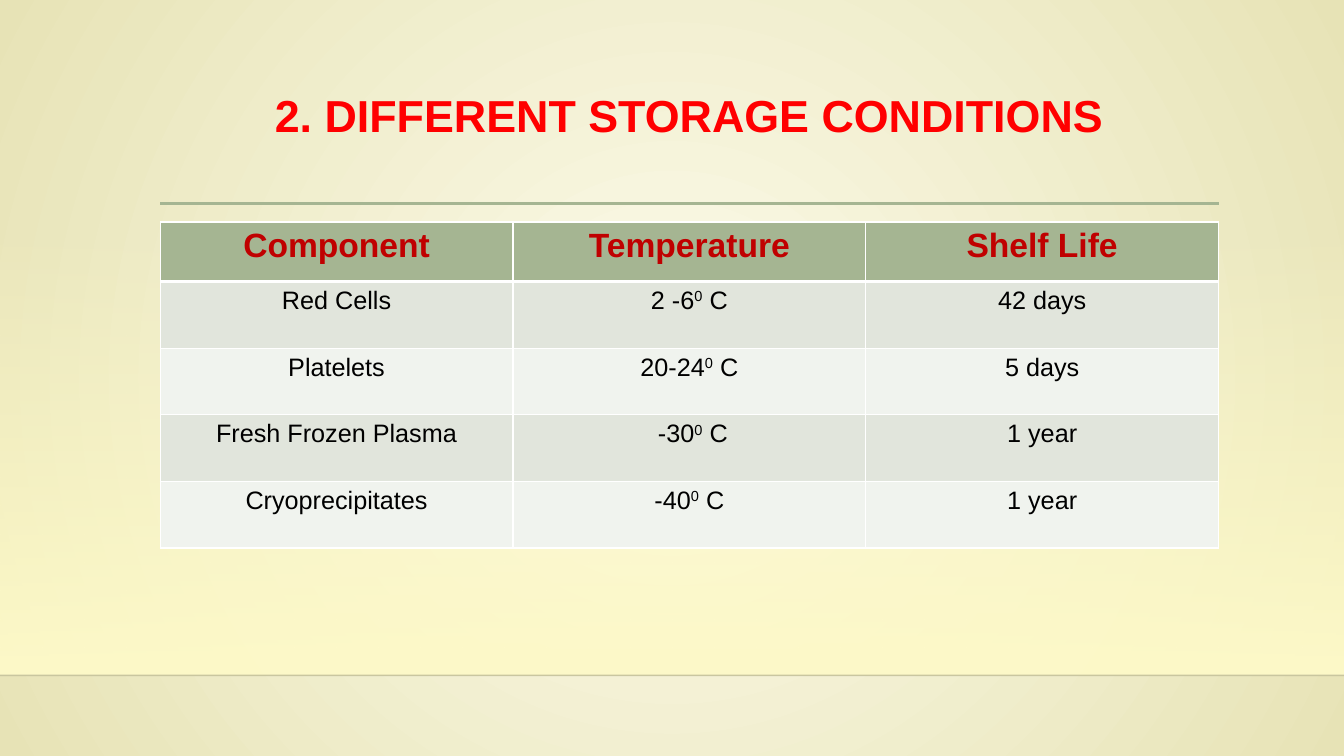
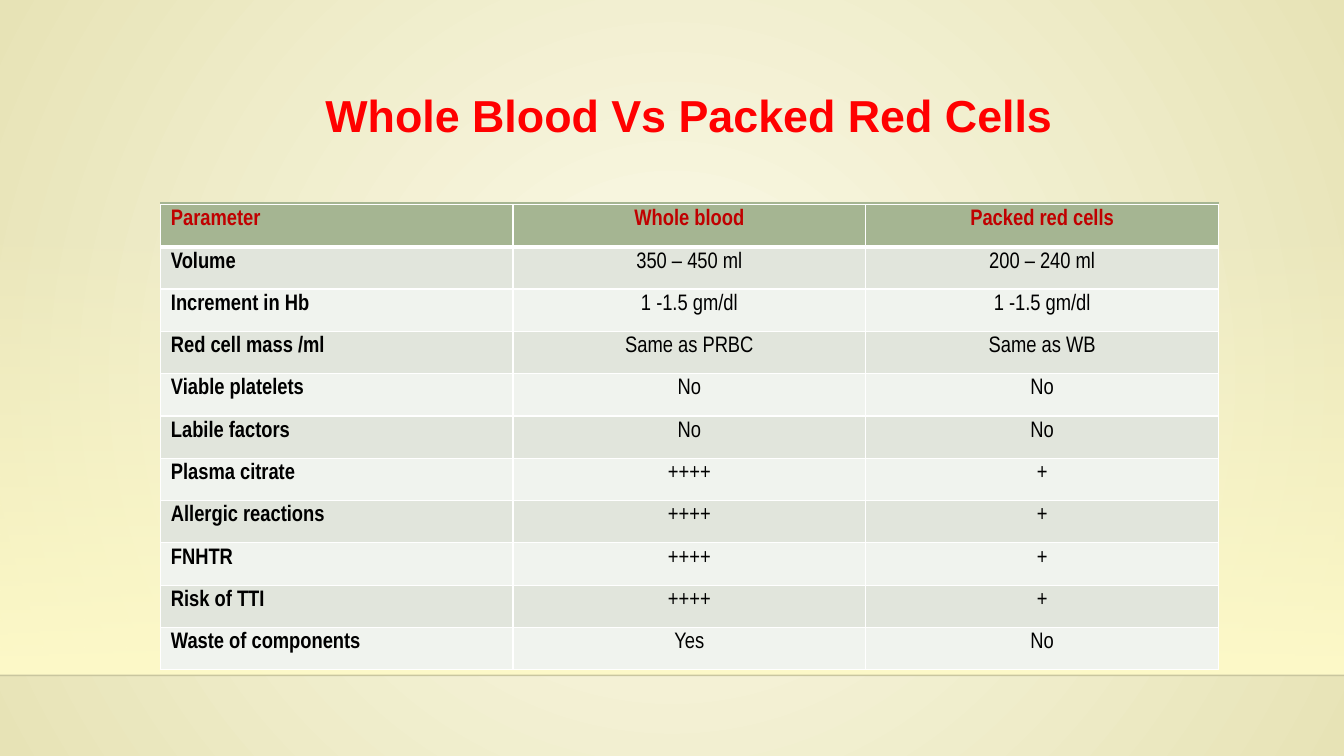
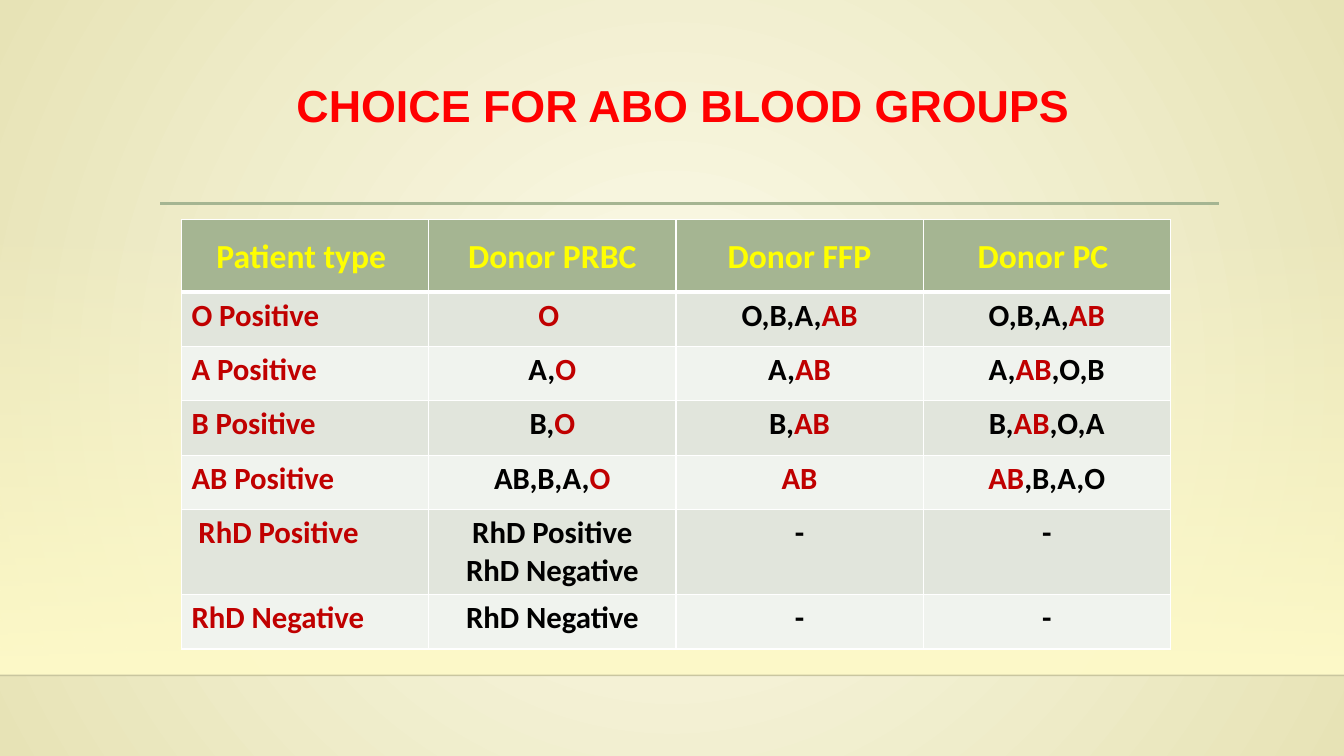
from dataclasses import dataclass

from lxml import etree
from pptx import Presentation
from pptx.dml.color import RGBColor
from pptx.enum.shapes import MSO_CONNECTOR as Connector, MSO_SHAPE as Preset
from pptx.enum.text import MSO_ANCHOR as Anchor, MSO_AUTO_SIZE as AutoSize, PP_ALIGN as Align
from pptx.oxml import parse_xml
from pptx.oxml.ns import nsdecls, qn
from pptx.util import Pt

# Shared measures and colours
SLIDE_WIDTH, SLIDE_HEIGHT = 960, 540
BAND_TOP, BAND_BOTTOM = 159, 482.4
CONTENT_LEFT, CONTENT_WIDTH = 114.4, 756
RULE_TOP = 145.4
TITLE_HEIGHT = 82.8
RED, DARK_RED, YELLOW = "FF0000", "C00000", "FFFF00"
BLACK, WHITE, GREEN = "000000", "FFFFFF", "A5B592"
BAND_FILLS = ("F0F3EE", "E1E5DC")
CREAM = "FEFAC9"


@dataclass(frozen=True)
class TableSlide:
    """A titled table; text between bars is accented, or raised without an accent colour."""
    title: str
    top: float
    row_heights: list[float]
    rows: list[list[str]]
    font: str
    header_size: float
    body_size: float
    left: float = CONTENT_LEFT
    width: float = CONTENT_WIDTH
    header_color: str = DARK_RED
    header_spacing: float = 1.0
    body_bold: bool = False
    label_bold: bool = False
    label_color: str = BLACK
    label_align: Align = Align.LEFT
    header_label_align: Align = Align.CENTER
    accent_color: str | None = None
    side_inset: float = 7.2
    title_top: float = 63.4
    title_inset: float = 3.6


def rgb(color: str) -> RGBColor:
    return RGBColor.from_string(color)


def paint_gradient(element, stops: list[tuple[str, int]], direction: str) -> None:
    """Replace the first solid fill; each stop is a colour and its opacity in percent."""
    last = len(stops) - 1
    stop_xml = "".join(
        f'<a:gs pos="{100000 * index // last}"><a:srgbClr val="{color}">'
        f'<a:alpha val="{opacity * 1000}"/></a:srgbClr></a:gs>'
        for index, (color, opacity) in enumerate(stops))
    solid = next(element.iter(qn("a:solidFill")))
    solid.getparent().replace(solid, parse_xml(
        f'<a:gradFill {nsdecls("a")} rotWithShape="1">'
        f"<a:gsLst>{stop_xml}</a:gsLst>{direction}</a:gradFill>"))


def add_rule(slide, left: float, top: float, right: float, color: str,
             width: float, opacity: int = 100):
    rule = slide.shapes.add_connector(
        Connector.STRAIGHT, Pt(left), Pt(top), Pt(right), Pt(top))
    rule.line.color.rgb = rgb(color)
    rule.line.width = Pt(width)
    if opacity < 100:
        color_element = next(rule.element.iter(qn("a:srgbClr")))
        etree.SubElement(color_element, qn("a:alpha"), val=str(opacity * 1000))
    etree.SubElement(rule.element.spPr, qn("a:effectLst"))
    return rule


def decorate_layout(layout, slide) -> None:
    """Draw the shared parts on a slide, then hand them to its layout."""
    for placeholder in list(layout.placeholders)[1:]:
        layout.shapes.element.remove(placeholder.element)
    layout.background.fill.solid()
    layout.background.fill.fore_color.rgb = rgb(CREAM)
    paint_gradient(
        layout.element, [("FCFBEA", 100), ("E7E3B6", 100)],
        '<a:path path="circle"><a:fillToRect l="50000" t="50000" r="50000" b="50000"/></a:path>')

    band = slide.shapes.add_shape(
        Preset.RECTANGLE, 0, Pt(BAND_TOP), Pt(SLIDE_WIDTH), Pt(BAND_BOTTOM - BAND_TOP))
    band.shadow.inherit = False
    band.fill.solid()
    band.fill.fore_color.rgb = rgb(CREAM)
    band.line.fill.background()
    paint_gradient(band.element, [(CREAM, 0), (CREAM, 100)],
                   '<a:lin ang="5400000" scaled="0"/>')
    floor_line = add_rule(slide, 0, BAND_BOTTOM, SLIDE_WIDTH, "000001", 1, 20)
    title_rule = add_rule(slide, CONTENT_LEFT, RULE_TOP,
                          CONTENT_LEFT + CONTENT_WIDTH, GREEN, 2.5)
    for position, shape in enumerate((band, floor_line, title_rule), start=2):
        layout.shapes.element.insert(position, shape.element)


def add_run(paragraph, text: str, font: str, size: float, color: str, bold: bool):
    run = paragraph.add_run()
    run.text = text
    run.font.name = font
    run.font.size = Pt(size)
    run.font.bold = bold
    run.font.color.rgb = rgb(color)
    return run


def set_title(slide, content: TableSlide) -> None:
    title = slide.shapes.title
    title.left, title.top = Pt(CONTENT_LEFT), Pt(content.title_top)
    title.width, title.height = Pt(CONTENT_WIDTH), Pt(TITLE_HEIGHT)
    frame = title.text_frame
    frame.word_wrap = True
    frame.auto_size = AutoSize.NONE
    frame.vertical_anchor = Anchor.TOP
    frame.margin_top = Pt(content.title_inset)
    paragraph = frame.paragraphs[0]
    paragraph.alignment = Align.CENTER
    paragraph.line_spacing = 0.9
    add_run(paragraph, content.title, "Arial", 32, RED, True)


def set_borders(cell, top: float, bottom: float) -> None:
    properties = cell._tc.get_or_add_tcPr()
    widths = {"lnL": 1, "lnR": 1, "lnT": top, "lnB": bottom}
    for position, (side, width) in enumerate(widths.items()):
        properties.insert(position, parse_xml(
            f'<a:{side} {nsdecls("a")} w="{Pt(width)}"><a:solidFill>'
            f'<a:srgbClr val="{WHITE}"/></a:solidFill></a:{side}>'))


def fill_cell(cell, text: str, row: int, column: int, content: TableSlide) -> None:
    is_header, is_label = row == 0, column == 0
    cell.fill.solid()
    cell.fill.fore_color.rgb = rgb(GREEN if is_header else BAND_FILLS[row % 2])
    set_borders(cell, 3 if row == 1 else 1, 3 if is_header else 1)
    cell.margin_left = cell.margin_right = Pt(content.side_inset)

    # Text style follows from the place in the table
    align = Align.CENTER
    if is_label:
        align = content.header_label_align if is_header else content.label_align
    size = content.header_size if is_header else content.body_size
    bold = is_header or content.body_bold or (is_label and content.label_bold)
    color = BLACK
    if is_header:
        color = content.header_color
    elif is_label:
        color = content.label_color

    for index, line in enumerate(text.split("\n")):
        frame = cell.text_frame
        paragraph = frame.add_paragraph() if index else frame.paragraphs[0]
        paragraph.alignment = align
        if is_header:
            paragraph.line_spacing = content.header_spacing
        for part, words in enumerate(line.split("|")):
            if not words:
                continue
            accented = part % 2 == 1
            run_color = content.accent_color if accented and content.accent_color else color
            run = add_run(paragraph, words, content.font, size, run_color, bold)
            if accented and not content.accent_color:
                run._r.get_or_add_rPr().set("baseline", "30000")


def add_data_table(slide, content: TableSlide) -> None:
    column_count = len(content.rows[0])
    table = slide.shapes.add_table(
        len(content.rows), column_count, Pt(content.left), Pt(content.top),
        Pt(content.width), Pt(sum(content.row_heights))).table
    table.horz_banding = False
    for column in table.columns:
        column.width = Pt(content.width / column_count)
    for row, (height, texts) in enumerate(zip(content.row_heights, content.rows)):
        table.rows[row].height = Pt(height)
        for column, text in enumerate(texts):
            fill_cell(table.cell(row, column), text, row, column, content)


STORAGE = TableSlide(
    title="2. DIFFERENT STORAGE CONDITIONS",
    top=158.6, row_heights=[42.5] + [47.6] * 4,
    font="Arial", header_size=24, body_size=18, label_align=Align.CENTER,
    rows=[
        ["Component", "Temperature", "Shelf Life"],
        ["Red Cells", "2 -6|0| C", "42 days"],
        ["Platelets", "20-24|0| C", "5 days"],
        ["Fresh Frozen Plasma", " -30|0| C", "1 year"],
        ["Cryoprecipitates", "-40|0| C", "1 year"],
    ])

COMPARISON = TableSlide(
    title="Whole Blood Vs Packed Red Cells",
    top=146, row_heights=[30.24] * 11,
    font="Arial Narrow", header_size=16, body_size=16, label_bold=True,
    header_label_align=Align.LEFT, side_inset=7.7,
    rows=[
        ["Parameter", "Whole blood", "Packed red cells"],
        ["Volume", "350 – 450 ml", "200 – 240 ml"],
        ["Increment in Hb", "1 -1.5 gm/dl", "1 -1.5 gm/dl"],
        ["Red cell mass /ml", "Same as PRBC", "Same as WB"],
        ["Viable platelets", "No", "No"],
        ["Labile factors", "No", "No"],
        ["Plasma citrate", "++++", "+"],
        ["Allergic reactions", "++++", "+"],
        ["FNHTR", "++++", "+"],
        ["Risk of TTI", "++++", "+"],
        ["Waste of components", "Yes", "No"],
    ])

BLOOD_GROUPS = TableSlide(
    title="CHOICE FOR ABO BLOOD GROUPS ",
    title_top=21.6, title_inset=38,
    left=129.6, top=156.8, width=706.4,
    row_heights=[51.6] + [38.9] * 4 + [60.6, 38.9],
    font="Calibri", header_size=24, body_size=22, header_color=YELLOW,
    header_spacing=1.3, body_bold=True, label_color=DARK_RED, accent_color=DARK_RED,
    rows=[
        ["Patient type ", "Donor PRBC", "Donor FFP", "Donor PC "],
        ["O Positive", "|O ", "O,B,A,|AB", "O,B,A,|AB"],
        ["A Positive", "A,|O", "A,|AB", "A,|AB|,O,B"],
        ["B Positive", "B,|O", "B,|AB", "B,|AB|,O,A"],
        ["AB Positive", "AB,B,A,|O", "|AB", "|AB|,B,A,O"],
        [" RhD Positive", "RhD Positive\nRhD Negative", "-", "-"],
        ["RhD Negative", "RhD Negative", "-", "-"],
    ])


def main() -> None:
    presentation = Presentation()
    presentation.slide_width, presentation.slide_height = Pt(SLIDE_WIDTH), Pt(SLIDE_HEIGHT)
    layout = presentation.slide_layouts.get_by_name("Title Only")
    for index, content in enumerate((STORAGE, COMPARISON, BLOOD_GROUPS)):
        slide = presentation.slides.add_slide(layout)
        if index == 0:
            decorate_layout(layout, slide)
        set_title(slide, content)
        add_data_table(slide, content)
    presentation.save("out.pptx")


if __name__ == "__main__":
    main()
